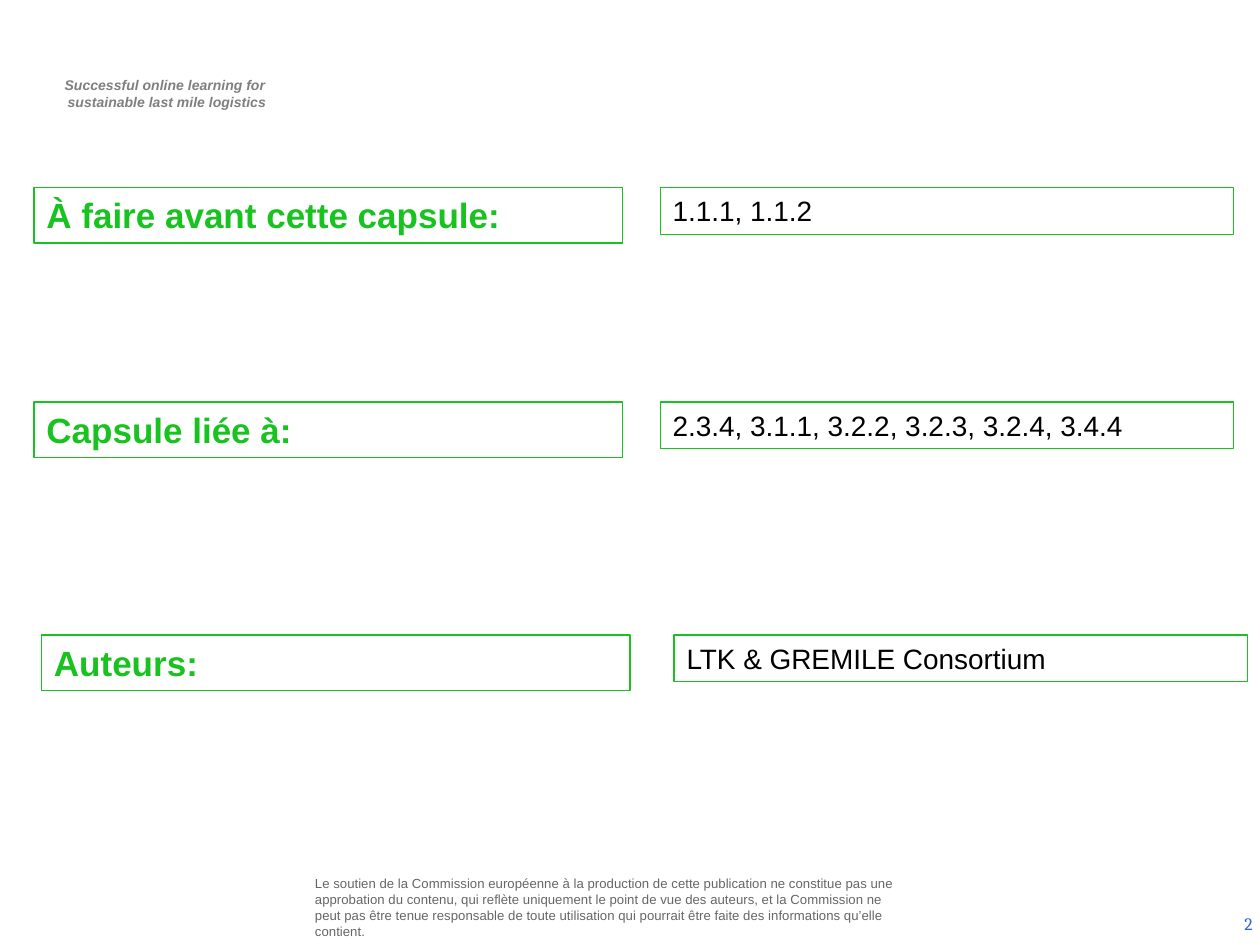
"""Build the capsule overview slide: prerequisites, related capsules and authors."""
from dataclasses import dataclass

from pptx import Presentation
from pptx.dml.color import RGBColor
from pptx.enum.shapes import MSO_SHAPE
from pptx.enum.text import MSO_ANCHOR, MSO_AUTO_SIZE, PP_ALIGN
from pptx.shapes.autoshape import Shape
from pptx.slide import Slide
from pptx.util import Inches, Pt

RECT = MSO_SHAPE.RECTANGLE
TOP, MIDDLE = MSO_ANCHOR.TOP, MSO_ANCHOR.MIDDLE
LEFT, CENTER, RIGHT = PP_ALIGN.LEFT, PP_ALIGN.CENTER, PP_ALIGN.RIGHT
FIT_SHAPE, NO_FIT = MSO_AUTO_SIZE.SHAPE_TO_FIT_TEXT, MSO_AUTO_SIZE.NONE

GREEN = RGBColor(0x18, 0xC3, 0x20)
BLUE = RGBColor(0x33, 0x66, 0xCC)
GRAY = RGBColor(0x7F, 0x7F, 0x7F)
DARK_GRAY = RGBColor(0x66, 0x66, 0x66)
BLACK = RGBColor(0, 0, 0)
WHITE = RGBColor(0xFF, 0xFF, 0xFF)

TAGLINE = ("Successful online learning for \n"
           "sustainable last mile logistics")
DISCLAIMER = (
    "Le soutien de la Commission européenne à la production de cette "
    "publication ne constitue pas une approbation du contenu, qui reflète "
    "uniquement le point de vue des auteurs, et la Commission ne peut pas "
    "être tenue responsable de toute utilisation qui pourrait être faite "
    "des informations qu’elle contient."
)


@dataclass(frozen=True)
class InfoRow:
    label: str
    value: str
    top: float
    label_left: float = 0.27
    value_left: float = 5.24


ROWS = (
    InfoRow("À faire avant cette capsule:", "1.1.1, 1.1.2", 1.49),
    InfoRow("Capsule liée à:", "2.3.4, 3.1.1, 3.2.2, 3.2.3, 3.2.4, 3.4.4", 3.19),
    InfoRow("Auteurs:", "LTK & GREMILE Consortium", 5.04, 0.33, 5.35),
)


def write_text(sp: Shape, text: str, *, size: float, color: RGBColor,
               font: str = "Arial", bold: bool = False, italic: bool = False,
               align: PP_ALIGN = LEFT, anchor: MSO_ANCHOR = TOP,
               fit: MSO_AUTO_SIZE = NO_FIT,
               insets: tuple[float, float, float, float] = (0.1, 0.05, 0.1, 0.05)) -> None:
    tf = sp.text_frame
    tf.word_wrap = True
    tf.auto_size = fit
    tf.vertical_anchor = anchor
    tf.margin_left, tf.margin_top, tf.margin_right, tf.margin_bottom = map(Inches, insets)
    tf.text = text
    for p in tf.paragraphs:
        p.alignment = align
        for r in p.runs:
            r.font.name = font
            r.font.size = Pt(size)
            r.font.bold = bold
            r.font.italic = italic
            r.font.color.rgb = color


def add_text(s: Slide, box: tuple[float, float, float, float], text: str, **fmt) -> None:
    write_text(s.shapes.add_textbox(*map(Inches, box)), text, **fmt)


def add_frame(s: Slide, box: tuple[float, float, float, float], text: str, **fmt) -> None:
    sp = s.shapes.add_shape(RECT, *map(Inches, box))
    sp.shadow.inherit = False
    sp.fill.solid()
    sp.fill.fore_color.rgb = WHITE
    sp.line.color.rgb = GREEN
    sp.line.width = Pt(0.75)
    write_text(sp, text, fit=FIT_SHAPE, **fmt)


def add_row(s: Slide, row: InfoRow) -> None:
    add_frame(s, (row.label_left, row.top, 4.67, 0.44), row.label,
              size=20, color=GREEN, bold=True)
    add_frame(s, (row.value_left, row.top, 4.55, 0.37), row.value,
              size=16, color=BLACK)


def main() -> None:
    prs = Presentation()
    prs.slide_width, prs.slide_height = Inches(10), Inches(7.5)
    s = prs.slides.add_slide(prs.slide_layouts[6])
    add_text(s, (0.29, 0.56, 2.03, 0.37), TAGLINE, size=8, color=GRAY,
             bold=True, italic=True, align=CENTER, fit=FIT_SHAPE,
             insets=(0.14, 0.05, 0.1, 0.05))
    add_text(s, (2.46, 6.95, 4.73, 0.5), DISCLAIMER, size=7.5, color=DARK_GRAY,
             anchor=MIDDLE, insets=(0.04, 0.04, 0.04, 0.04))
    add_text(s, (7.71, 7.13, 2.33, 0.4), "2", size=10, color=BLUE,
             font="Cambria", align=RIGHT, anchor=MIDDLE)
    for row in ROWS:
        add_row(s, row)
    prs.save("out.pptx")


if __name__ == "__main__":
    main()
